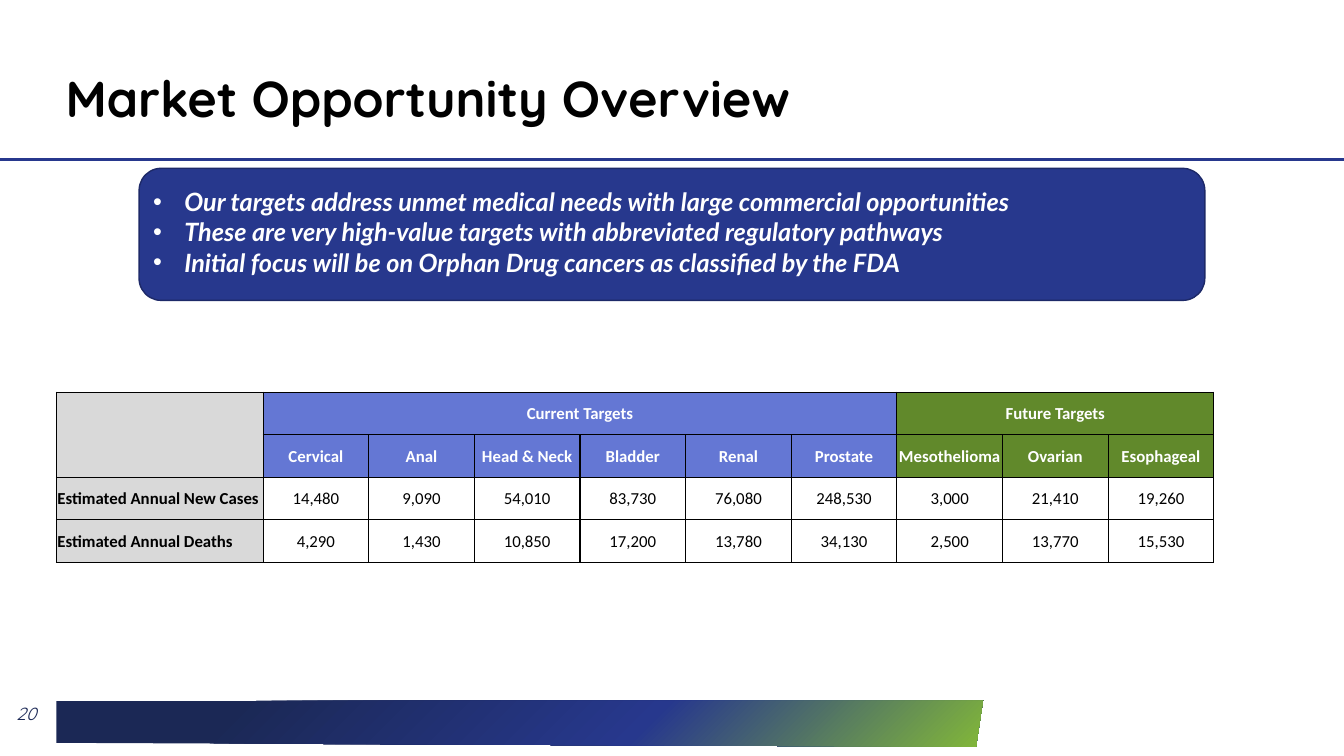
from lxml import etree
from pptx import Presentation
from pptx.dml.color import RGBColor
from pptx.enum.shapes import MSO_CONNECTOR, MSO_SHAPE
from pptx.enum.text import MSO_ANCHOR, MSO_AUTO_SIZE, PP_ALIGN
from pptx.oxml import parse_xml
from pptx.oxml.ns import nsdecls, qn
from pptx.util import Inches, Pt

STRAIGHT = MSO_CONNECTOR.STRAIGHT
ROUNDED = MSO_SHAPE.ROUNDED_RECTANGLE
MIDDLE = MSO_ANCHOR.MIDDLE
LEFT, CENTER = PP_ALIGN.LEFT, PP_ALIGN.CENTER

BLACK = RGBColor(0x00, 0x00, 0x00)
WHITE = RGBColor(0xFF, 0xFF, 0xFF)
GRAY = RGBColor(0xD9, 0xD9, 0xD9)
BLUE = RGBColor(0x27, 0x38, 0x8D)
DARK_BLUE = RGBColor(0x1D, 0x29, 0x68)
NAVY = RGBColor(0x1B, 0x28, 0x55)
LIME = RGBColor(0x82, 0xB7, 0x39)
CURRENT_BLUE = RGBColor(0x64, 0x77, 0xD4)
FUTURE_GREEN = RGBColor(0x61, 0x89, 0x2B)

MESSAGES = [
    "Our targets address unmet medical needs with large commercial opportunities",
    "These are very high-value targets with abbreviated regulatory pathways",
    "Initial focus will be on Orphan Drug cancers as classified by the FDA",
]
TARGET_GROUPS = [
    ("Current Targets", CURRENT_BLUE,
     ["Cervical", "Anal", "Head & Neck", "Bladder", "Renal", "Prostate"]),
    ("Future Targets", FUTURE_GREEN, ["Mesothelioma", "Ovarian", "Esophageal"]),
]
ESTIMATES = [
    ("Estimated Annual New Cases",
     ["14,480", "9,090", "54,010", "83,730", "76,080", "248,530", "3,000", "21,410", "19,260"]),
    ("Estimated Annual Deaths",
     ["4,290", "1,430", "10,850", "17,200", "13,780", "34,130", "2,500", "13,770", "15,530"]),
]


def format_runs(paragraph, name, size, color, bold=False, italic=False):
    for run in paragraph.runs:
        font = run.font
        font.name, font.size = name, Pt(size)
        font.bold, font.italic = bold, italic
        font.color.rgb = color


def add_title(slide, text):
    title = slide.shapes.title
    title.left, title.top = Inches(0.55), Inches(0.42)
    title.width, title.height = Inches(11.5), Inches(1.16)
    text_frame = title.text_frame
    text_frame.text = text
    text_frame.vertical_anchor = MIDDLE
    text_frame.auto_size = MSO_AUTO_SIZE.NONE
    paragraph = text_frame.paragraphs[0]
    paragraph.alignment = LEFT
    paragraph.line_spacing = 0.9
    format_runs(paragraph, "Quicksand", 36, BLACK, bold=True)


def add_page_number(slide, number):
    box = slide.shapes.add_textbox(Inches(0.06), Inches(6.88), Inches(0.58), Inches(0.4))
    text_frame = box.text_frame
    text_frame.word_wrap = True
    text_frame.vertical_anchor = MIDDLE
    text_frame.text = number
    format_runs(text_frame.paragraphs[0], "Quicksand", 12.5, NAVY, italic=True)


def add_title_rule(slide, width):
    rule = slide.shapes.add_connector(STRAIGHT, 0, Inches(1.58), width, Inches(1.58))
    rule.line.color.rgb = BLUE
    rule.line.width = Pt(2)
    etree.SubElement(rule._element.spPr, qn("a:effectLst"))


def add_footer_band(slide):
    corners = [(9.75, 6.95), (9.68, 7.41), (0.56, 7.37)]
    builder = slide.shapes.build_freeform(Inches(0.56), Inches(6.95))
    builder.add_line_segments([(Inches(x), Inches(y)) for x, y in corners], close=True)
    band = builder.convert_to_shape()
    band.shadow.inherit = False
    band.line.fill.background()
    band.fill.background()
    stops = "".join(
        f'<a:gs pos="{position * 1000}"><a:srgbClr val="{color}"/></a:gs>'
        for position, color in [(0, LIME), (37, BLUE), (81, NAVY)])
    gradient = parse_xml(
        f'<a:gradFill {nsdecls("a")} rotWithShape="1"><a:gsLst>{stops}</a:gsLst>'
        '<a:path path="circle"><a:fillToRect l="100000" t="100000"/></a:path></a:gradFill>')
    properties = band._element.spPr
    properties.replace(properties.find(qn("a:noFill")), gradient)


def add_message_panel(slide):
    panel = slide.shapes.add_shape(
        ROUNDED, Inches(1.38), Inches(1.67), Inches(10.57), Inches(1.31))
    panel.shadow.inherit = False
    panel.fill.solid()
    panel.fill.fore_color.rgb = BLUE
    panel.line.color.rgb = DARK_BLUE
    panel.line.width = Pt(1)


def add_bullets(slide, messages):
    box = slide.shapes.add_textbox(Inches(1.42), Inches(1.8), Inches(10.38), Inches(1.01))
    text_frame = box.text_frame
    text_frame.word_wrap = False
    text_frame.auto_size = MSO_AUTO_SIZE.SHAPE_TO_FIT_TEXT
    text_frame.text = "\n".join(messages)
    for paragraph in text_frame.paragraphs:
        paragraph.alignment = LEFT
        properties = paragraph._p.get_or_add_pPr()
        properties.set("marL", str(Inches(0.31)))
        properties.set("indent", str(Inches(-0.31)))
        etree.SubElement(properties, qn("a:buFont"), typeface="Arial")
        etree.SubElement(properties, qn("a:buChar"), char="•")
        format_runs(paragraph, "Lato", 18, WHITE, bold=True, italic=True)


def add_borders(cell):
    properties = cell._tc.get_or_add_tcPr()
    for side in ("lnL", "lnR", "lnT", "lnB"):
        properties.append(parse_xml(
            f'<a:{side} {nsdecls("a")} w="{Pt(1)}"><a:solidFill>'
            f'<a:srgbClr val="{BLACK}"/></a:solidFill></a:{side}>'))


def style_cell(cell):
    cell.margin_left = cell.margin_right = cell.margin_top = Inches(0.01)
    cell.margin_bottom = 0
    cell.vertical_anchor = MIDDLE
    add_borders(cell)
    cell.fill.background()


def fill_cell(cell, text, fill=None, color=BLACK, bold=False, alignment=CENTER):
    cell.text = text
    paragraph = cell.text_frame.paragraphs[0]
    paragraph.alignment = alignment
    format_runs(paragraph, "Calibri", 12, color, bold)
    if fill is not None:
        cell.fill.solid()
        cell.fill.fore_color.rgb = fill


def add_target_table(slide):
    width, height, label_width = 11.48, 1.69, 2.05
    target_count = sum(len(targets) for _, _, targets in TARGET_GROUPS)
    row_count = 2 + len(ESTIMATES)
    table = slide.shapes.add_table(
        row_count, target_count + 1,
        Inches(0.56), Inches(3.89), Inches(width), Inches(height)).table
    for index, column in enumerate(table.columns):
        column.width = Inches(label_width if index == 0 else (width - label_width) / target_count)
    for row in table.rows:
        row.height = Inches(height / row_count)
    for cell in table.iter_cells():
        style_cell(cell)

    fill_cell(table.cell(0, 0), "", GRAY)
    table.cell(0, 0).merge(table.cell(1, 0))
    start = 1
    for group, color, targets in TARGET_GROUPS:
        fill_cell(table.cell(0, start), group, color, WHITE, True)
        table.cell(0, start).merge(table.cell(0, start + len(targets) - 1))
        for column, target in enumerate(targets, start):
            fill_cell(table.cell(1, column), target, color, WHITE, True)
        start += len(targets)
    for row, (label, values) in enumerate(ESTIMATES, 2):
        fill_cell(table.cell(row, 0), label, GRAY, bold=True, alignment=LEFT)
        for column, value in enumerate(values, 1):
            fill_cell(table.cell(row, column), value)


def main():
    presentation = Presentation()
    presentation.slide_width = Inches(13.33)
    presentation.slide_height = Inches(7.5)
    slide = presentation.slides.add_slide(presentation.slide_layouts[5])
    add_page_number(slide, "20")
    add_title_rule(slide, presentation.slide_width)
    add_footer_band(slide)
    add_title(slide, "Market Opportunity Overview")
    add_message_panel(slide)
    add_bullets(slide, MESSAGES)
    add_target_table(slide)
    presentation.save("out.pptx")


if __name__ == "__main__":
    main()
